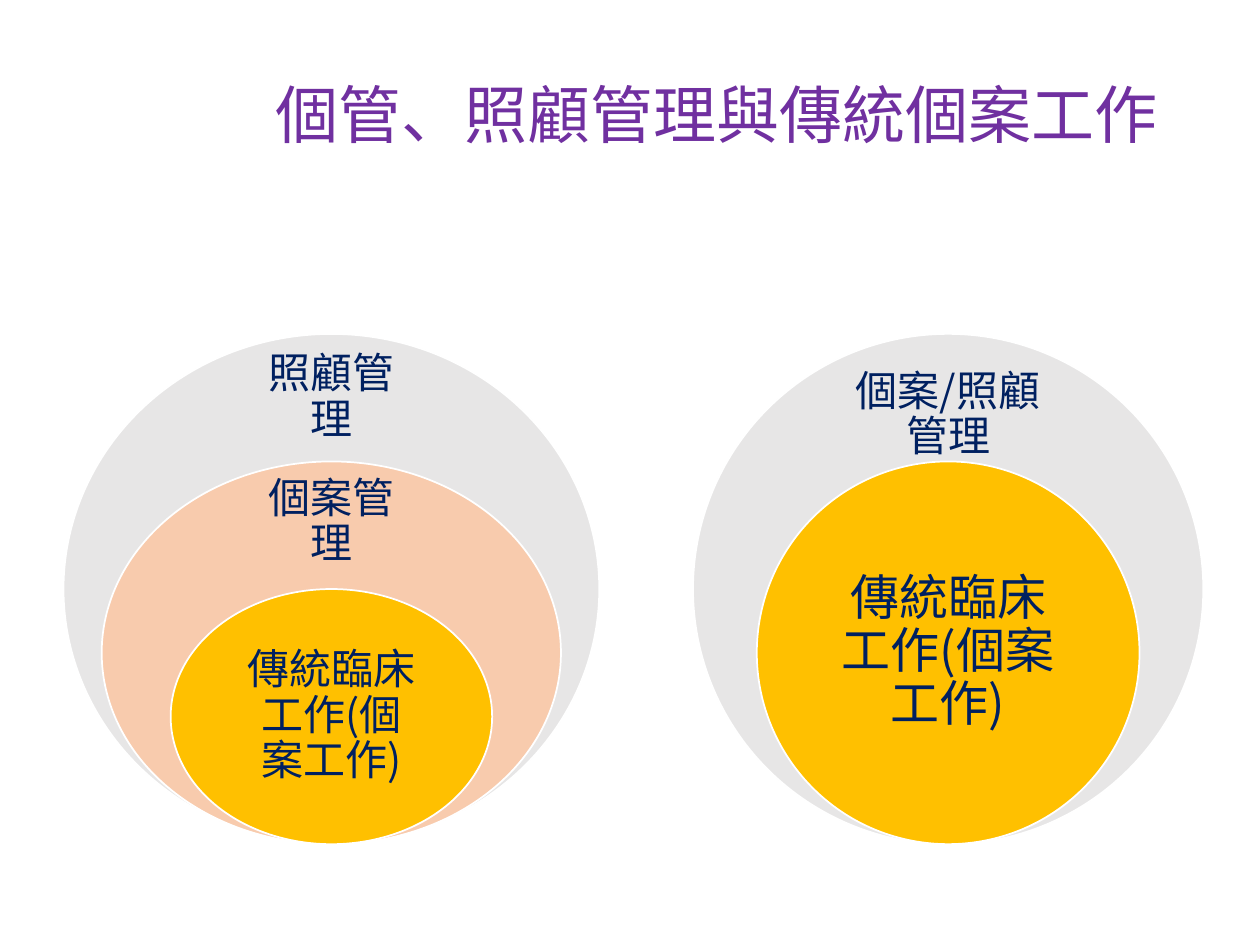
from dataclasses import dataclass

from lxml import etree
from pptx import Presentation
from pptx.dml.color import RGBColor
from pptx.enum.shapes import MSO_SHAPE
from pptx.enum.text import MSO_ANCHOR, PP_ALIGN
from pptx.oxml.ns import qn
from pptx.util import Inches, Pt

OVAL = MSO_SHAPE.OVAL
MIDDLE = MSO_ANCHOR.MIDDLE
CENTER = PP_ALIGN.CENTER
GREY = RGBColor(0xE7, 0xE6, 0xE6)
PEACH = RGBColor(0xF8, 0xCB, 0xAD)
GOLD = RGBColor(0xFF, 0xC0, 0x00)
WHITE = RGBColor(0xFF, 0xFF, 0xFF)
NAVY = RGBColor(0x00, 0x20, 0x60)
PURPLE = RGBColor(0x70, 0x30, 0xA0)
CJK_FONT = "Noto Sans CJK SC"
TITLE_FONT = "Calibri"

SLIDE_W, SLIDE_H = Inches(10), Inches(7.5)
DIAMETER = 0.54 * SLIDE_H
BOTTOM = Inches(6.7)


@dataclass(frozen=True)
class Ring:
    text: str
    fill: RGBColor
    width: float
    height: float
    label_middle: float
    label_width: float
    label_height: float
    size: int = 24
    inset: float = 0.19


@dataclass(frozen=True)
class Venn:
    center: float
    rings: tuple[Ring, ...]


CASEWORK = "傳統臨床工作(個案工作)"
VENNS = (
    Venn(0.263, (
        Ring("照顧管理", GREY, 1.05, 1, 0.125, 0.37, 0.15),
        Ring("個案管理", PEACH, 0.9, 0.75, 0.37, 0.42, 0.14),
        Ring(CASEWORK, GOLD, 0.63, 0.5, 0.75, 0.44, 0.25),
    )),
    Venn(0.7525, (
        Ring("個案/照顧管理", GREY, 1, 1, 0.16, 0.53, 0.17),
        Ring(CASEWORK, GOLD, 0.75, 0.75, 0.625, 0.53, 0.375, 28, 0.22),
    )),
)


def style(p, size: int, color: RGBColor, font: str) -> None:
    p.font.size = Pt(size)
    p.font.color.rgb = color
    p.font.name = font
    latin = p.font._element.find(qn("a:latin"))
    ea = etree.Element(qn("a:ea"), typeface=CJK_FONT)
    latin.addnext(ea)


def draw_ring(shapes, center: int, ring: Ring) -> None:
    w, h = int(ring.width * DIAMETER), int(ring.height * DIAMETER)
    sp = shapes.add_shape(OVAL, center - w // 2, BOTTOM - h, w, h)
    sp.shadow.inherit = False
    sp.fill.solid()
    sp.fill.fore_color.rgb = ring.fill
    sp.line.color.rgb = WHITE
    sp.line.width = Pt(1)

    w, h = int(ring.label_width * DIAMETER), int(ring.label_height * DIAMETER)
    middle = int(BOTTOM - (1 - ring.label_middle) * DIAMETER)
    tf = shapes.add_textbox(center - w // 2, middle - h // 2, w, h).text_frame
    tf.word_wrap = True
    tf.vertical_anchor = MIDDLE
    tf.margin_left = tf.margin_right = Inches(ring.inset)
    tf.margin_top = tf.margin_bottom = Inches(ring.inset)
    p = tf.paragraphs[0]
    p.text = ring.text
    p.alignment = CENTER
    p.line_spacing = 0.9
    style(p, ring.size, NAVY, CJK_FONT)


def draw_venn(slide, venn: Venn) -> None:
    group = slide.shapes.add_group_shape()
    for ring in venn.rings:
        draw_ring(group.shapes, int(venn.center * SLIDE_W), ring)


def draw_title(slide, text: str) -> None:
    left = Inches(2.09)
    box = slide.shapes.add_textbox(left, Inches(0.55), SLIDE_W - left, Inches(0.71))
    box.text_frame.word_wrap = True
    p = box.text_frame.paragraphs[0]
    p.text = text
    style(p, 36, PURPLE, TITLE_FONT)


def main() -> None:
    prs = Presentation()
    prs.slide_width, prs.slide_height = SLIDE_W, SLIDE_H
    slide = prs.slides.add_slide(prs.slide_layouts[6])
    for venn in VENNS:
        draw_venn(slide, venn)
    draw_title(slide, "個管、照顧管理與傳統個案工作")
    prs.save("out.pptx")


if __name__ == "__main__":
    main()
